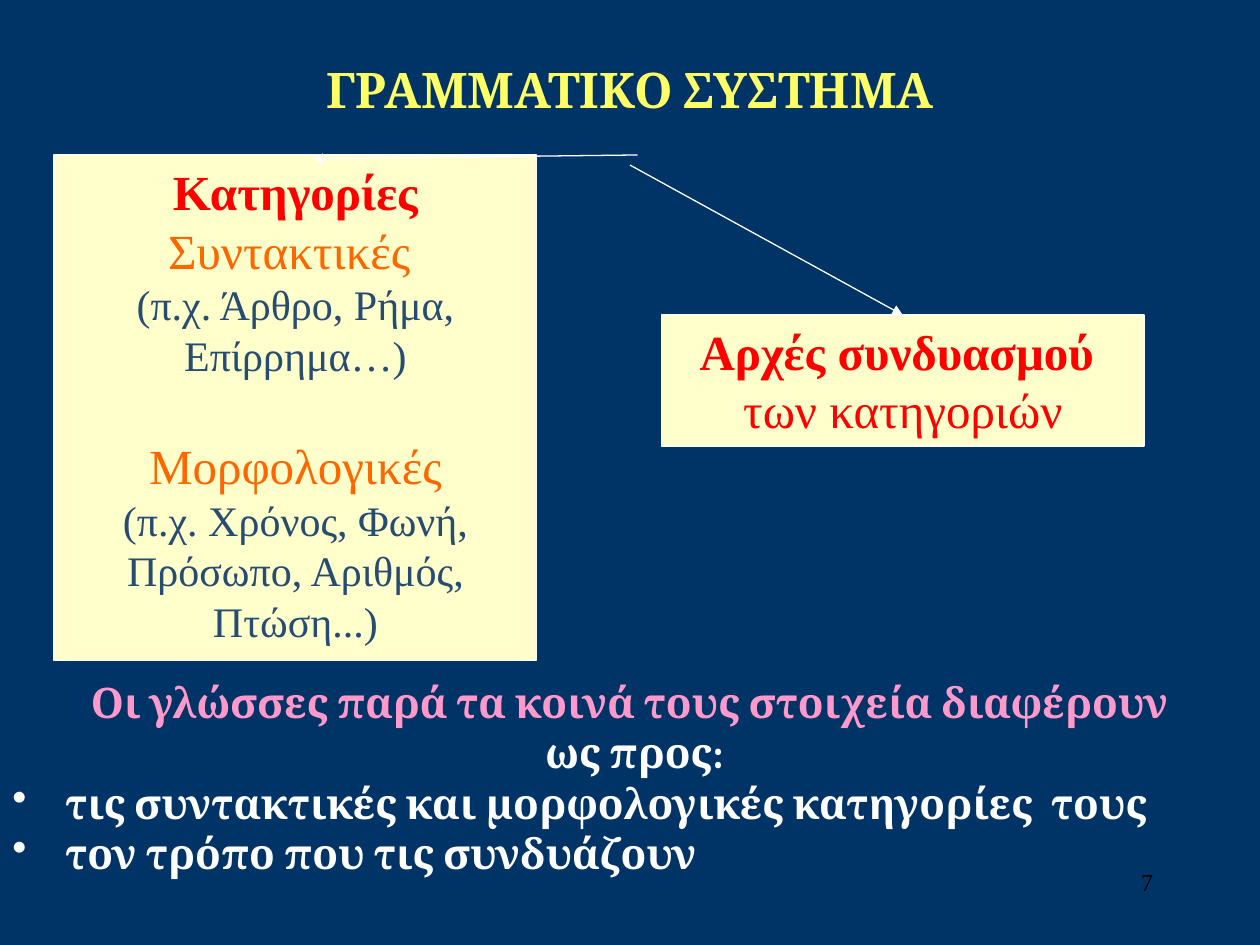
from pptx import Presentation
from pptx.dml.color import RGBColor
from pptx.enum.shapes import MSO_CONNECTOR as Connector, MSO_SHAPE as Shape
from pptx.enum.text import MSO_ANCHOR as Anchor, PP_ALIGN as Align
from pptx.oxml.ns import qn
from pptx.util import Inches, Pt
from lxml.etree import SubElement

SERIF, HEADING = "Times New Roman", "Cambria"
NAVY, CREAM, WHITE, BLACK = "003366", "FFFFCC", "FFFFFF", "000000"
YELLOW, PINK, RED, ORANGE, SLATE = "FFFF66", "FF99CC", "FF0000", "FF6600", "264C72"


def color(value):
    """Turn a hex string into a colour."""
    return RGBColor.from_string(value)


def write_lines(frame, lines, font, align=Align.CENTER):
    """Fill a frame with (text, size, colour, bold) lines and return the paragraphs."""
    frame.word_wrap = True
    for index, (text, size, tint, bold) in enumerate(lines):
        para = frame.paragraphs[0] if index == 0 else frame.add_paragraph()
        para.text = text
        para.alignment = align
        para.font.name = font
        para.font.size = Pt(size)
        para.font.bold = bold
        para.font.color.rgb = color(tint)
    return frame.paragraphs


def place_title(page, left, top, width, height):
    """Place the slide title."""
    title = page.shapes.title
    title.left, title.top, title.width, title.height = map(
        Inches, (left, top, width, height))
    frame = title.text_frame
    frame.vertical_anchor = Anchor.MIDDLE
    frame.margin_top = Inches(0.15)
    write_lines(frame, [("ΓΡΑΜΜΑΤΙΚΟ ΣΥΣΤΗΜΑ", 28, YELLOW, True)], HEADING)


def add_panel(page, left, top, width, height, lines):
    """Add a cream panel and return it with its paragraphs."""
    panel = page.shapes.add_shape(
        Shape.RECTANGLE, *map(Inches, (left, top, width, height)))
    panel.shadow.inherit = False
    panel.fill.solid()
    panel.fill.fore_color.rgb = color(CREAM)
    panel.line.color.rgb = color(WHITE)
    panel.line.width = Pt(0.75)
    panel.text_frame.vertical_anchor = Anchor.TOP
    return panel, write_lines(panel.text_frame, lines, SERIF)


def add_arrow(page, start, end):
    """Add a thin white arrow between two points."""
    arrow = page.shapes.add_connector(
        Connector.STRAIGHT, *map(Inches, (*start, *end)))
    arrow.line.color.rgb = color(WHITE)
    arrow.line.width = Pt(0.75)
    SubElement(arrow.line._get_or_add_ln(), qn("a:tailEnd"), type="triangle")
    SubElement(arrow._element.spPr, qn("a:effectLst"))
    return arrow


def add_conclusion(page, left, top, width, height):
    """Add the closing statement with its bulleted points."""
    box = page.shapes.add_textbox(*map(Inches, (left, top, width, height)))
    paras = write_lines(box.text_frame, [
        ("Οι γλώσσες παρά τα κοινά τους στοιχεία διαφέρουν", 24, PINK, True),
        (" ως προς:", 24, WHITE, True),
        ("τις συντακτικές και μορφολογικές κατηγορίες  τους", 24, WHITE, True),
        ("τον τρόπο που τις συνδυάζουν", 24, WHITE, True),
    ], HEADING)
    for index, para in enumerate(paras):
        properties = para._p.get_or_add_pPr()
        properties.set("marL", str(Inches(0.42)))
        properties.set("indent", str(-Inches(0.42)))
        if index >= 2:
            para.alignment = Align.LEFT
            bullet = properties.makeelement(qn("a:buChar"), {"char": "•"})
            properties.insert_element_before(
                bullet, "a:tabLst", "a:defRPr", "a:extLst")


def add_page_number(page, left, top, width, height):
    """Add the page number."""
    box = page.shapes.add_textbox(*map(Inches, (left, top, width, height)))
    write_lines(box.text_frame, [("7", 14, BLACK, False)], SERIF, Align.RIGHT)


def build_page(deck):
    """Build the grammar system slide."""
    page = deck.slides.add_slide(deck.slide_layouts[5])
    page.background.fill.solid()
    page.background.fill.fore_color.rgb = color(NAVY)
    add_page_number(page, 7.17, 6.83, 2.08, 0.5)
    add_conclusion(page, 0, 5.32, 10, 1.7)
    place_title(page, 0.25, 0, 9.5, 1.31)
    _, category_paras = add_panel(page, 0.43, 1.23, 3.83, 4.01, [
        ("Κατηγορίες", 28, RED, True),
        ("Συντακτικές ", 28, ORANGE, False),
        ("(π.χ. Άρθρο, Ρήμα, Επίρρημα…)", 24, SLATE, False),
        ("Μορφολογικές", 28, ORANGE, False),
        ("(π.χ. Χρόνος, Φωνή, Πρόσωπο, Αριθμός, Πτώση...)", 24, SLATE, False),
    ])
    category_paras[3].space_before = Pt(32)
    principles, _ = add_panel(page, 5.25, 2.5, 3.83, 1.04, [
        ("Αρχές συνδυασμού ", 28, RED, True),
        ("των κατηγοριών", 28, RED, False),
    ])
    add_arrow(page, (5.06, 1.23), (2.48, 1.26))
    add_arrow(page, (5, 1.31), (7.17, 2.5)).end_connect(principles, 0)


def main():
    """Create and save the deck."""
    deck = Presentation()
    deck.slide_width, deck.slide_height = Inches(10), Inches(7.5)
    build_page(deck)
    deck.save("out.pptx")


if __name__ == "__main__":
    main()
